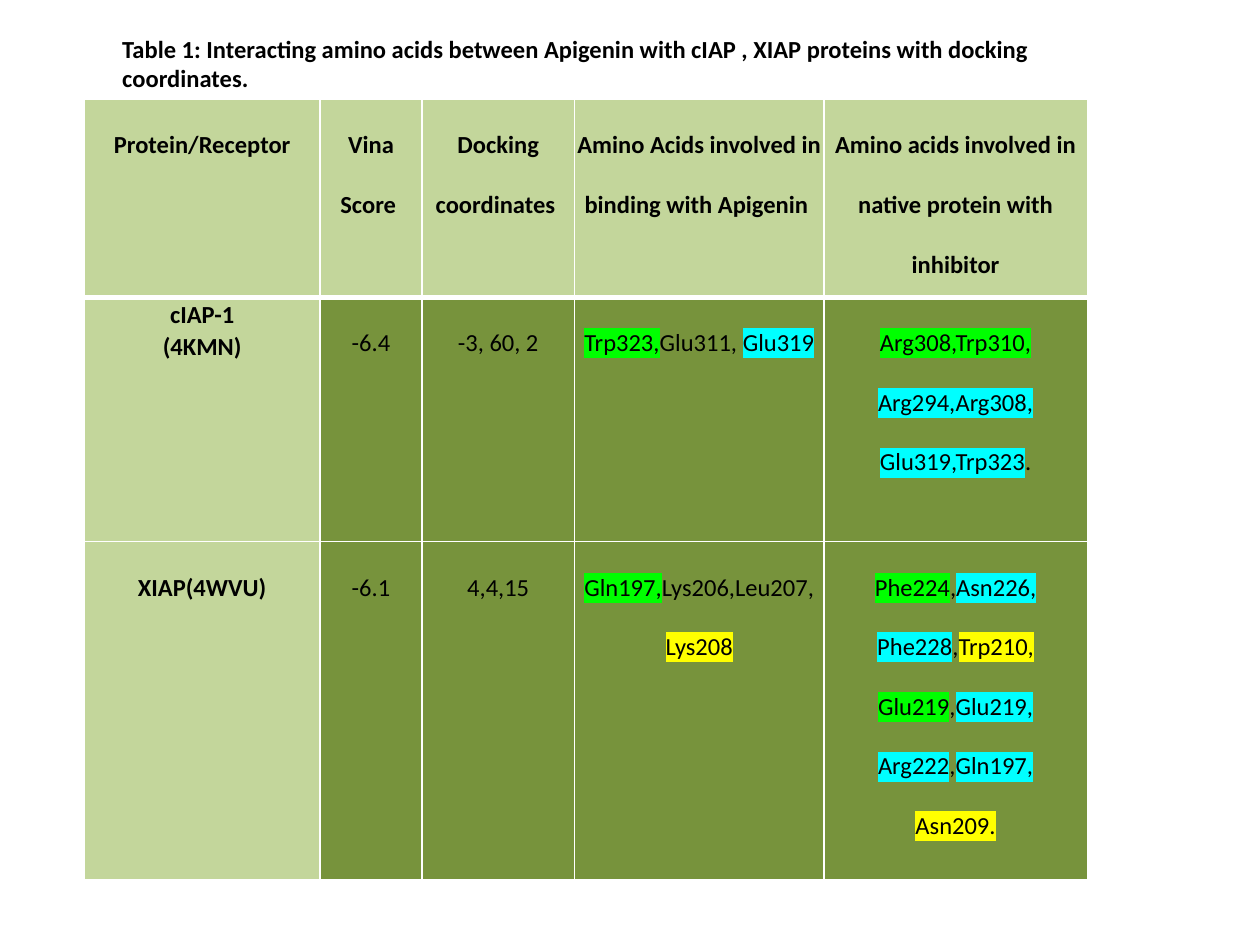
from lxml.etree import SubElement
from pptx import Presentation
from pptx.dml.color import RGBColor
from pptx.enum.text import MSO_ANCHOR, MSO_AUTO_SIZE, PP_ALIGN
from pptx.oxml.ns import qn
from pptx.util import Inches, Pt

COLORS = {
    "text": "000000", "border": "FFFFFF", "light": "C3D69B", "dark": "77933C",
    "green": "00FF00", "cyan": "00FFFF", "yellow": "FFFF00",
}


def style_run(r, bold, highlight=None):
    r.font.size, r.font.bold, r.font.name = Pt(14), bold, "Calibri"
    r.font.color.rgb = RGBColor.from_string(COLORS["text"])
    if highlight:
        rPr = r.font._element
        mark = SubElement(rPr, qn("a:highlight"))
        SubElement(mark, qn("a:srgbClr"), val=COLORS[highlight])
        rPr.find(qn("a:solidFill")).addnext(mark)


def add_borders(cell, widths):
    tcPr = cell._tc.get_or_add_tcPr()
    for side, width in widths.items():
        ln = SubElement(tcPr, qn("a:ln" + side), w=str(Pt(width)))
        fill = SubElement(ln, qn("a:solidFill"))
        SubElement(fill, qn("a:srgbClr"), val=COLORS["border"])


prs = Presentation()
prs.slide_width, prs.slide_height = Inches(10), Inches(7.5)
s = prs.slides.add_slide(prs.slide_layouts[5])

# Caption
title = s.shapes.title
title.left, title.top = Inches(0.87), Inches(0.22)
title.width, title.height = Inches(7.56), Inches(0.57)
tf = title.text_frame
tf.text = ("Table 1: Interacting amino acids between Apigenin with cIAP , "
           "XIAP proteins with docking coordinates.")
tf.word_wrap = True
tf.auto_size = MSO_AUTO_SIZE.NONE
tf.vertical_anchor = MSO_ANCHOR.TOP
tf.paragraphs[0].alignment = PP_ALIGN.LEFT
style_run(tf.paragraphs[0].runs[0], True)

# Table content: each cell is a list of paragraphs, each paragraph a list of
# plain strings or (text, highlight) pairs
headers = ["Protein/Receptor", "Vina Score ", "Docking coordinates ",
           "Amino Acids involved in binding with Apigenin ",
           "Amino acids involved in native protein with inhibitor"]
rows = [
    [[[h]] for h in headers],
    [
        [["cIAP-1"], ["(4KMN)"]],
        [["-6.4"]],
        [["-3, 60, 2"]],
        [[("Trp323,", "green"), "Glu311, ", ("Glu319", "cyan")]],
        [[("Arg308,Trp310, ", "green"), ("Arg294,Arg308,", "cyan")],
         [("Glu319,Trp323", "cyan"), "."]],
    ],
    [
        [["XIAP(4WVU)"]],
        [["-6.1"]],
        [["4,4,15"]],
        [[("Gln197,", "green"), "Lys206,Leu207,"], [("Lys208", "yellow")]],
        [[("Phe224", "green"), ",", ("Asn226, Phe228", "cyan"), ",",
          ("Trp210,", "yellow")],
         [("Glu219", "green"), ",", ("Glu219, Arg222", "cyan"), ",",
          ("Gln197,", "cyan")],
         [("Asn209.", "yellow")]],
    ],
]
col_widths = [1.87, 0.81, 1.21, 1.98, 2.09]
row_heights = [1.57, 1.94, 2.68]

# Table grid
table = s.shapes.add_table(
    len(rows), len(col_widths), Inches(0.67), Inches(0.79),
    Inches(sum(col_widths)), Inches(sum(row_heights))).table
for col, width in zip(table.columns, col_widths):
    col.width = Inches(width)
for row, height in zip(table.rows, row_heights):
    row.height = Inches(height)

# Cells
for i, row in enumerate(rows):
    for j, paragraphs in enumerate(row):
        cell = table.cell(i, j)
        is_label = i == 0 or j == 0
        cell.margin_left = cell.margin_right = cell.margin_top = Inches(0.01)
        cell.margin_bottom = 0
        add_borders(cell, {"L": 1, "R": 1, "T": 3 if i == 1 else 1,
                           "B": 3 if i == 0 else 1})
        cell.fill.solid()
        cell.fill.fore_color.rgb = RGBColor.from_string(
            COLORS["light" if is_label else "dark"])
        tf = cell.text_frame
        for k, parts in enumerate(paragraphs):
            p = tf.add_paragraph() if k else tf.paragraphs[0]
            p.alignment = PP_ALIGN.CENTER
            p.line_spacing = 1.07 if (i, j) == (1, 0) else 2.0
            for part in parts:
                text, highlight = (part, None) if isinstance(part, str) else part
                r = p.add_run()
                r.text = text
                style_run(r, is_label, highlight)

prs.save("out.pptx")
